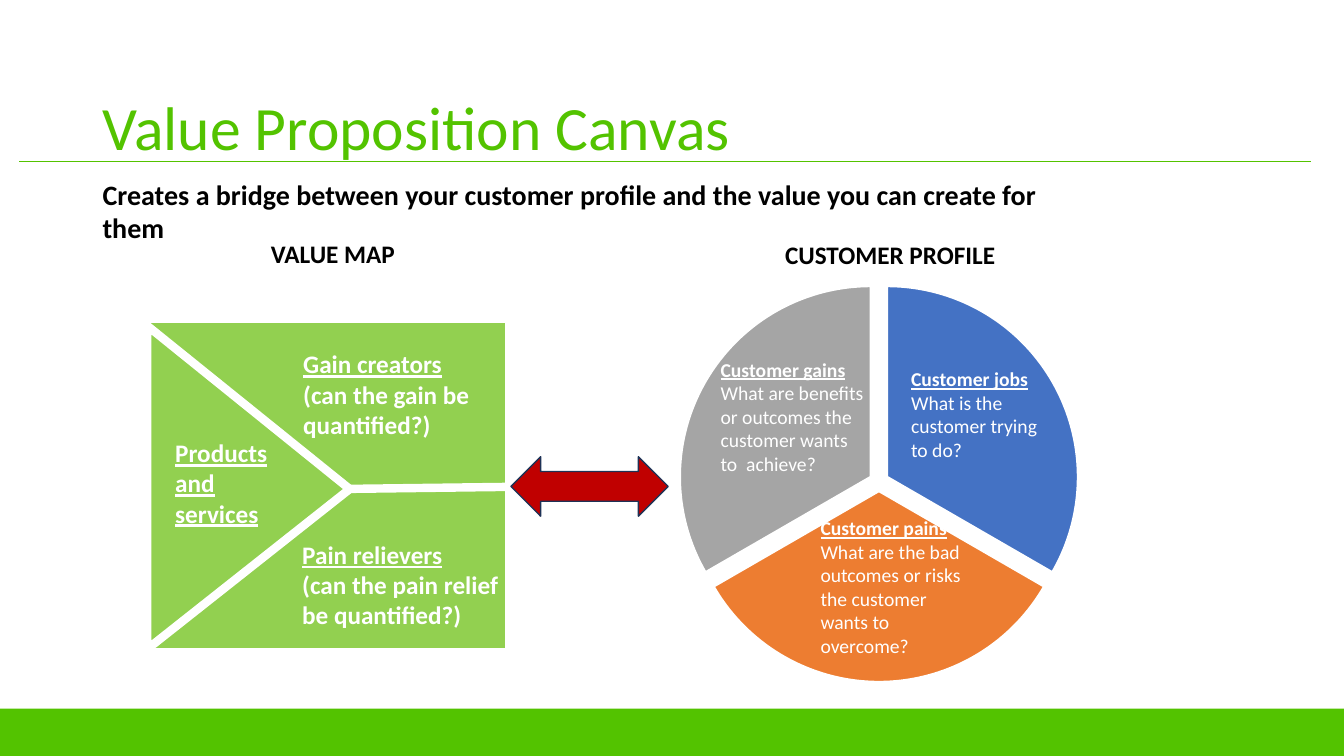
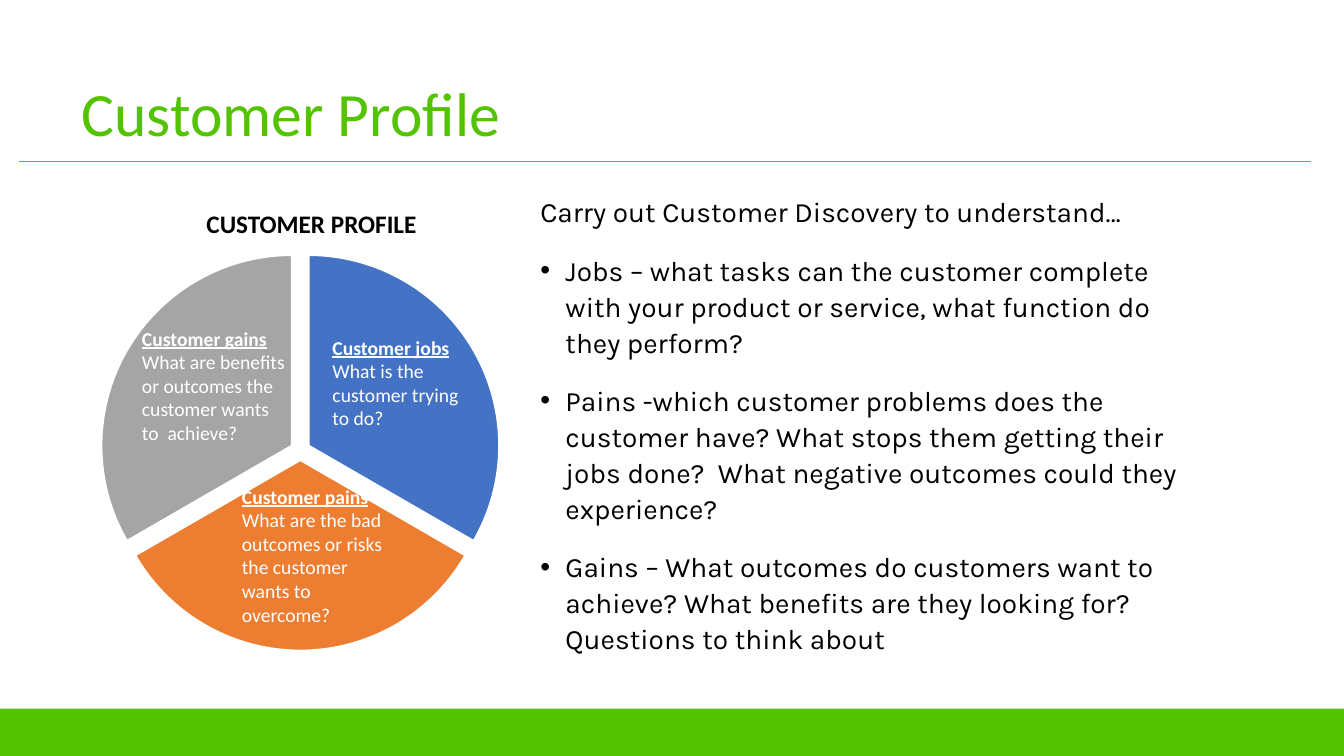
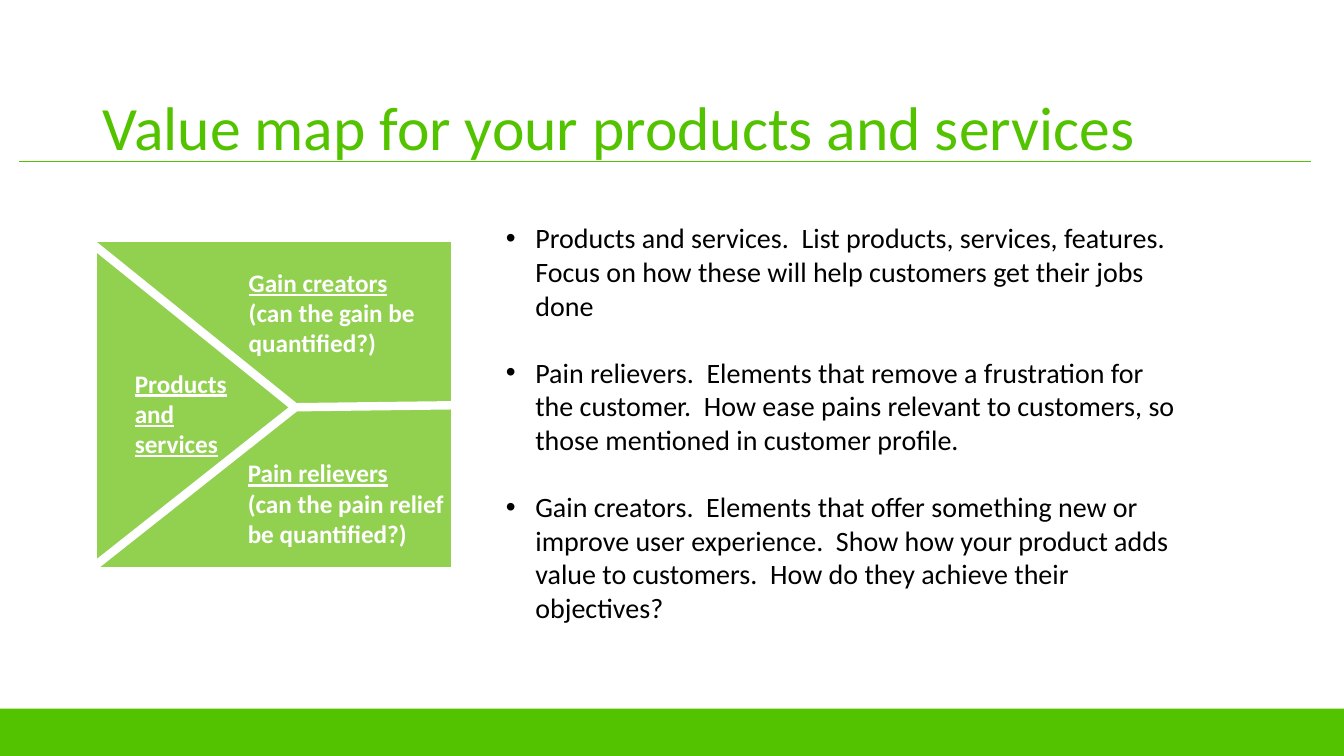
from lxml import etree
from pptx import Presentation
from pptx.chart.data import CategoryChartData
from pptx.dml.color import RGBColor
from pptx.enum.chart import XL_CHART_TYPE as ChartType
from pptx.enum.shapes import MSO_CONNECTOR as Connector, MSO_SHAPE as Preset
from pptx.enum.text import MSO_ANCHOR as Anchor, MSO_AUTO_SIZE as AutoSize, PP_ALIGN as Align
from pptx.oxml.ns import qn
from pptx.util import Pt

WIDTH, HEIGHT = 960, 540
GREEN, LIME, RED, NAVY = "53C300", "92D050", "C00000", "1E3256"
BLUE, ORANGE, GRAY = "4472C4", "ED7D31", "A5A5A5"
WHITE, BLACK = "FFFFFF", "000000"

TITLE_SIZE = (828, 104.4)
BRIDGE = "Creates a bridge between your customer profile and the value you can create for them"

# colour, heading, question, offset from the chart corner, text height
PROFILE = [
    (BLUE, "Customer jobs", "What is the customer trying to do?", (247.7, 70), 75),
    (ORANGE, "Customer pains",
     "What are the bad outcomes or risks the customer wants to overcome?", (183, 176.4), 109),
    (GRAY, "Customer gains",
     "What are benefits or outcomes the customer wants to  achieve?", (111.6, 63.4), 92),
]
PROFILE_SIZE = (463.7, 311)
SLICE_VALUE = 33

# heading, question, offset from the map corner, text width
VALUE_MAP = [
    ("Gain creators", "(can the gain be quantified?)", (104.4, 15.1), 143.3),
    ("Pain relievers", "(can the pain relief be quantified?)", (103.7, 151.2), 168.5),
]
MAP_SIZE = (256.3, 233.3)

DISCOVERY_LEAD = "Carry out Customer Discovery to understand…"
DISCOVERY = [
    "Jobs – what tasks can the customer complete with your product or service, "
    "what function do  they perform?",
    "Pains -which customer problems does the customer have? What stops them getting "
    "their jobs done?  What negative outcomes could they experience?",
    "Gains – What outcomes do customers want to achieve? What benefits are they "
    "looking for? Questions to think about",
]
MAP_POINTS = [
    "Products and services.  List products, services, features.  Focus on how these "
    "will help customers get their jobs done",
    "Pain relievers.  Elements that remove a frustration for the customer.  How ease "
    "pains relevant to customers, so those mentioned in customer profile.",
    "Gain creators.  Elements that offer something new or improve user experience.  "
    "Show how your product adds value to customers.  How do they achieve their objectives?",
]


def rgb(value):
    return RGBColor.from_string(value)


def apply(target, **values):
    for name, value in values.items():
        setattr(target, name, value)


def style_font(font, size, color, name="Calibri", **extra):
    apply(font, size=Pt(size), name=name, **extra)
    font.color.rgb = rgb(color)


def place(shape, left, top, width, height):
    apply(shape, left=Pt(left), top=Pt(top), width=Pt(width), height=Pt(height))


def add_block(slide, preset, box, fill, line=None, line_width=1):
    shape = slide.shapes.add_shape(preset, *map(Pt, box))
    shape.shadow.inherit = False
    shape.fill.solid()
    shape.fill.fore_color.rgb = rgb(fill)
    if line:
        shape.line.color.rgb = rgb(line)
        shape.line.width = Pt(line_width)
    else:
        shape.line.fill.background()
    return shape


def add_line(slide, start, end, color, width):
    line = slide.shapes.add_connector(Connector.STRAIGHT, *map(Pt, start + end))
    line.line.color.rgb = rgb(color)
    line.line.width = Pt(width)
    etree.SubElement(line.element.spPr, qn("a:effectLst"))
    return line


def add_text(slide, box, paragraphs, size, color, wrap=True):
    """Each paragraph is a tuple: text, bold, underline."""
    frame = slide.shapes.add_textbox(*map(Pt, box)).text_frame
    frame.word_wrap = wrap
    for index, (text, bold, underline) in enumerate(paragraphs):
        paragraph = frame.add_paragraph() if index else frame.paragraphs[0]
        run = paragraph.add_run()
        run.text = text
        style_font(run.font, size, color, bold=bold, underline=underline)


def add_heading(slide, left, top, width, text):
    add_text(slide, (left, top, width, 29), [(text, True, False)], 18, BLACK, wrap=False)


def add_slide(presentation, layout, title, left=66.2, top=41):
    slide = presentation.slides.add_slide(presentation.slide_layouts[layout])
    shape = slide.shapes.title
    place(shape, left, top, *TITLE_SIZE)
    frame = shape.text_frame
    frame.text = title
    apply(frame, vertical_anchor=Anchor.MIDDLE, auto_size=AutoSize.NONE, word_wrap=True)
    apply(frame.paragraphs[0], alignment=Align.LEFT, line_spacing=0.9)
    style_font(frame.paragraphs[0].font, 44, GREEN)
    return slide


def decorate_master(presentation, slide):
    """Draw the band and the rule, then hand them to the master."""
    band = add_block(slide, Preset.RECTANGLE, (0, 506.2, WIDTH, HEIGHT - 506.2), GREEN)
    rule = add_line(slide, (13.7, 115.2), (936.7, 115.2), GREEN, 0.75)
    for shape in (band, rule):
        presentation.slide_master.shapes.element.append(shape.element)


def fill_body(slide, box, items, font, indent, gap=0, after=0, spacing=1.0):
    """Each item is a tuple: text, whether it has a bullet."""
    body = slide.placeholders[1]
    place(body, *box)
    frame = body.text_frame
    apply(frame, vertical_anchor=Anchor.TOP, auto_size=AutoSize.NONE, word_wrap=True)
    for index, (text, bulleted) in enumerate(items):
        paragraph = frame.add_paragraph() if index else frame.paragraphs[0]
        paragraph.text = text
        apply(paragraph, alignment=Align.LEFT, line_spacing=spacing,
              space_before=Pt(gap if index else 0), space_after=Pt(after))
        properties = paragraph._p.get_or_add_pPr()
        margin = Pt(indent) if bulleted else 0
        properties.set("marL", str(margin))
        properties.set("indent", str(-margin))
        if bulleted:
            etree.SubElement(properties, qn("a:buFont")).set("typeface", "Arial")
            etree.SubElement(properties, qn("a:buChar")).set("char", "•")
        else:
            etree.SubElement(properties, qn("a:buNone"))
        style_font(paragraph.font, 20, BLACK, font)


def set_pie_layout(chart, explosion, **fractions):
    series = chart.element.find(".//" + qn("c:ser"))
    exploded = etree.Element(qn("c:explosion"), val=str(explosion))
    series.find(qn("c:dPt")).addprevious(exploded)
    plot_area = chart.element.find(".//" + qn("c:plotArea"))
    layout = plot_area.find(qn("c:layout"))
    if layout is None:
        layout = etree.Element(qn("c:layout"))
        plot_area.insert(0, layout)
    manual = etree.SubElement(layout, qn("c:manualLayout"))
    values = {"layoutTarget": "inner", "xMode": "edge", "yMode": "edge", **fractions}
    for name, value in values.items():
        etree.SubElement(manual, qn("c:" + name)).set("val", str(value))


def add_customer_profile(slide, left, top):
    data = CategoryChartData()
    data.categories = [str(number + 1) for number in range(len(PROFILE))]
    data.add_series("Series 1", [SLICE_VALUE] * len(PROFILE))
    box = map(Pt, (left, top, *PROFILE_SIZE))
    chart = slide.shapes.add_chart(ChartType.PIE, *box, data).chart
    apply(chart, has_legend=False, has_title=False)
    style_font(chart.font, 10, BLACK)
    plot = chart.plots[0]
    plot.vary_by_categories = True
    for index, (color, *_) in enumerate(PROFILE):
        piece = plot.series[0].points[index].format
        piece.fill.solid()
        piece.fill.fore_color.rgb = rgb(color)
        piece.line.color.rgb = rgb(WHITE)
        piece.line.width = Pt(1.5)
    set_pie_layout(chart, 5, x=0.19, y=0.04, w=0.62, h=0.92)
    for _, heading, question, (dx, dy), height in PROFILE:
        add_text(slide, (left + dx, top + dy, 118.8, height),
                 [(heading, True, True), (question, False, False)], 14, WHITE)
    add_heading(slide, left + 157.7, top - 21.4, 165.6, "CUSTOMER PROFILE")


def add_value_map(slide, left, top, products_offset):
    add_block(slide, Preset.RECTANGLE, (left, top, *MAP_SIZE), LIME, WHITE)
    triangle = add_block(slide, Preset.ISOSCELES_TRIANGLE,
                         (left - 43.2, top + 45.4, 231.1, 144.7), LIME, WHITE, 6)
    triangle.rotation = 90
    triangle.adjustments[0] = 0.505
    add_line(slide, (left + 144.5, top + 118.8), (left + 257, top + 117.4), WHITE, 6)
    for heading, question, (dx, dy), width in VALUE_MAP:
        add_text(slide, (left + dx, top + dy, width, 72.7),
                 [(heading, True, True), (question, True, False)], 18, WHITE)
    dx, dy = products_offset
    add_text(slide, (left + dx, top + dy, 90.7, 72.7),
             [("Products and services", True, True)], 18, WHITE)


def main():
    presentation = Presentation()
    apply(presentation, slide_width=Pt(WIDTH), slide_height=Pt(HEIGHT))

    canvas = add_slide(presentation, 5, "Value Proposition Canvas")
    decorate_master(presentation, canvas)
    add_customer_profile(canvas, 396, 188.6)
    add_value_map(canvas, 105.1, 230.4, (13, 78.5))
    add_heading(canvas, 186.5, 167, 103.7, "VALUE MAP")
    add_text(canvas, (66.2, 123.1, 717.1, 31.7), [(BRIDGE, True, False)], 20, BLACK)
    add_block(canvas, Preset.LEFT_RIGHT_ARROW, (365, 326.2, 112.3, 42.5), RED, NAVY)

    profile = add_slide(presentation, 1, "Customer Profile", 51.1, 31)
    fill_body(profile, (378.7, 133.9, 480.2, 221),
              [(DISCOVERY_LEAD, False)] + [(text, True) for text in DISCOVERY],
              "Karla", 18, gap=10, after=6, spacing=1.07)
    add_customer_profile(profile, -17.3, 166.3)

    value_map = add_slide(presentation, 1, "Value map for your products and services")
    fill_body(value_map, (354.2, 154.1, 499.7, 231.8),
              [(text, True) for text in MAP_POINTS], "Calibri", 21, gap=24)
    add_value_map(value_map, 66.2, 172.1, (23, 87.1))

    presentation.save("out.pptx")


if __name__ == "__main__":
    main()
